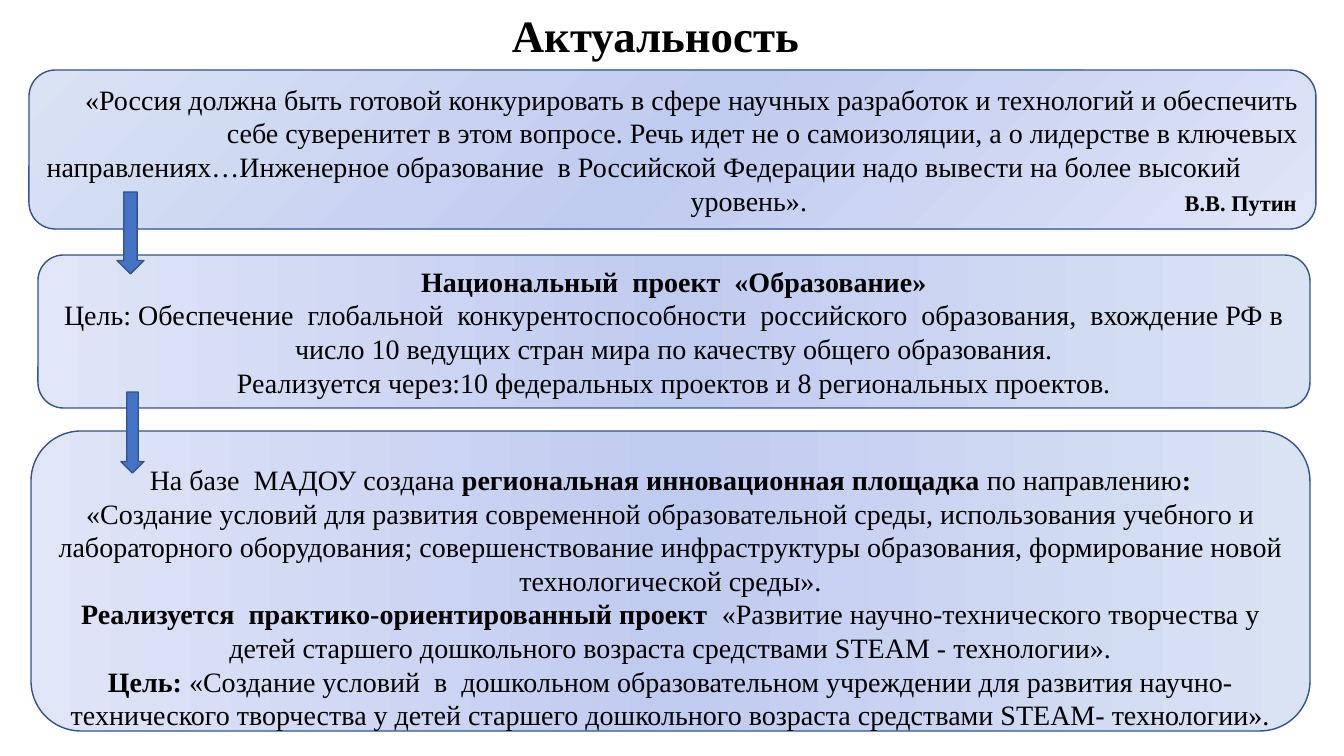
from copy import deepcopy

from pptx import Presentation
from pptx.dml.color import RGBColor as Rgb
from pptx.enum.shapes import MSO_SHAPE as Shape
from pptx.enum.text import MSO_ANCHOR as Anchor, PP_ALIGN as Align
from pptx.oxml.ns import qn
from pptx.util import Emu, Pt
from lxml.etree import SubElement

COLOURS = {
    "text": "000000",
    "line": "325491",
    "arrow": "4472C4",
    "pale": "DAE3F3",
    "middle": "C0CBF0",
    "lilac": "E0E5F7",
}
GRADIENT = ((0, "pale"), (0.5, "middle"), (1, "lilac"))


def px(length):
    return Emu(round(length * 914400 / 100.8))


def colour(name):
    return Rgb.from_string(COLOURS[name])


class Board:
    font_name = "Times New Roman"

    def __init__(self, deck):
        self.page = deck.slides.add_slide(deck.slide_layouts[5])

    def fill_para(self, para, spans, **paragraph_format):
        for name, value in paragraph_format.items():
            setattr(para, name, value)
        for text, size, bold in spans:
            span = para.add_run()
            span.text = text
            values = {"name": self.font_name, "size": Pt(size), "bold": bold}
            for name, value in values.items():
                setattr(span.font, name, value)
            span.font.color.rgb = colour("text")

    def title(self, text, left, top, width, height):
        box = self.page.shapes.title
        place = {"left": left, "top": top, "width": width, "height": height}
        for name, value in place.items():
            setattr(box, name, px(value))
        box.text_frame.vertical_anchor = Anchor.MIDDLE
        self.fill_para(box.text_frame.paragraphs[0], [(text, 32, True)],
                       alignment=Align.CENTER, line_spacing=0.9)

    def shape(self, kind, place):
        item = self.page.shapes.add_shape(kind, *map(px, place))
        item.shadow.inherit = False
        item.line.color.rgb = colour("line")
        item.line.width = Pt(1)
        return item

    def arrow(self, *place):
        item = self.shape(Shape.DOWN_ARROW, place)
        item.fill.solid()
        item.fill.fore_color.rgb = colour("arrow")

    def panel(self, place, angle, paragraphs, top_margin=5):
        box = self.shape(Shape.ROUNDED_RECTANGLE, place)
        box.fill.gradient()
        box.fill.gradient_angle = angle
        stop_list = box._element.spPr.find(".//" + qn("a:gsLst"))
        stop_list.append(deepcopy(stop_list[0]))
        for stop, (position, name) in zip(box.fill.gradient_stops, GRADIENT):
            stop.position = position
            stop.color.rgb = colour(name)
        frame = box.text_frame
        frame.word_wrap = True
        frame.vertical_anchor = Anchor.MIDDLE
        frame.margin_top = px(top_margin)
        for index, (alignment, tabs, spans) in enumerate(paragraphs):
            para = frame.add_paragraph() if index else frame.paragraphs[0]
            if tabs:
                tab_list = SubElement(para._p.get_or_add_pPr(), qn("a:tabLst"))
                for position, side in tabs:
                    SubElement(tab_list, qn("a:tab"), pos=str(px(position)), algn=side)
            self.fill_para(para, spans, alignment=alignment)


def plain(text):
    return text, 20, False


def strong(text):
    return text, 20, True


def centred(*spans):
    return Align.CENTER, (), spans


QUOTE = [
    (Align.RIGHT, (), [plain(
        "«Россия должна быть готовой конкурировать в сфере научных разработок и технологий "
        "и обеспечить себе суверенитет в этом вопросе. Речь идет не о самоизоляции, "
        "а о лидерстве в ключевых")]),
    (Align.LEFT, (), [plain(
        "направлениях…Инженерное образование  в Российской Федерации надо вывести "
        "на более высокий")]),
    (Align.LEFT, ((644, "l"), (1250, "r")),
     [plain("\tуровень».\t"), ("В.В. Путин", 16, True)]),
]
PROJECT = [
    centred(strong("Национальный  проект  «Образование»")),
    centred(plain(
        "Цель: Обеспечение  глобальной  конкурентоспособности  российского  образования,  "
        "вхождение РФ в число 10 ведущих стран мира по качеству общего образования.")),
    centred(plain("Реализуется через:10 федеральных проектов и 8 региональных проектов.")),
]
REGION = [
    centred(plain("На базе  МАДОУ создана "),
            strong("региональная инновационная площадка "),
            plain("по направлению"), strong(":")),
    centred(plain(
        "«Создание условий для развития современной образовательной среды, использования "
        "учебного и лабораторного оборудования; совершенствование инфраструктуры "
        "образования, формирование новой технологической среды».")),
    centred(strong("Реализуется  практико-ориентированный проект  "),
            plain("«Развитие научно-технического творчества у детей старшего дошкольного "
                  "возраста средствами STEAM - технологии».")),
    centred(strong("Цель: "),
            plain("«Создание условий  в  дошкольном образовательном учреждении для развития "
                  "научно-технического творчества у детей старшего дошкольного возраста "
                  "средствами STEAM- технологии».")),
]


def main():
    deck = Presentation()
    deck.slide_width, deck.slide_height = px(1344), px(756)
    board = Board(deck)
    board.title("Актуальность", 76, 0, 1159, 76)
    board.panel((29, 70, 1287, 159), 315, QUOTE)
    board.panel((38, 255, 1272, 153), 180, PROJECT)
    board.panel((31, 431, 1279, 300), 180, REGION, top_margin=37)
    board.arrow(117, 192, 27, 82)
    board.arrow(121, 392, 23, 81)
    deck.save("out.pptx")


if __name__ == "__main__":
    main()
